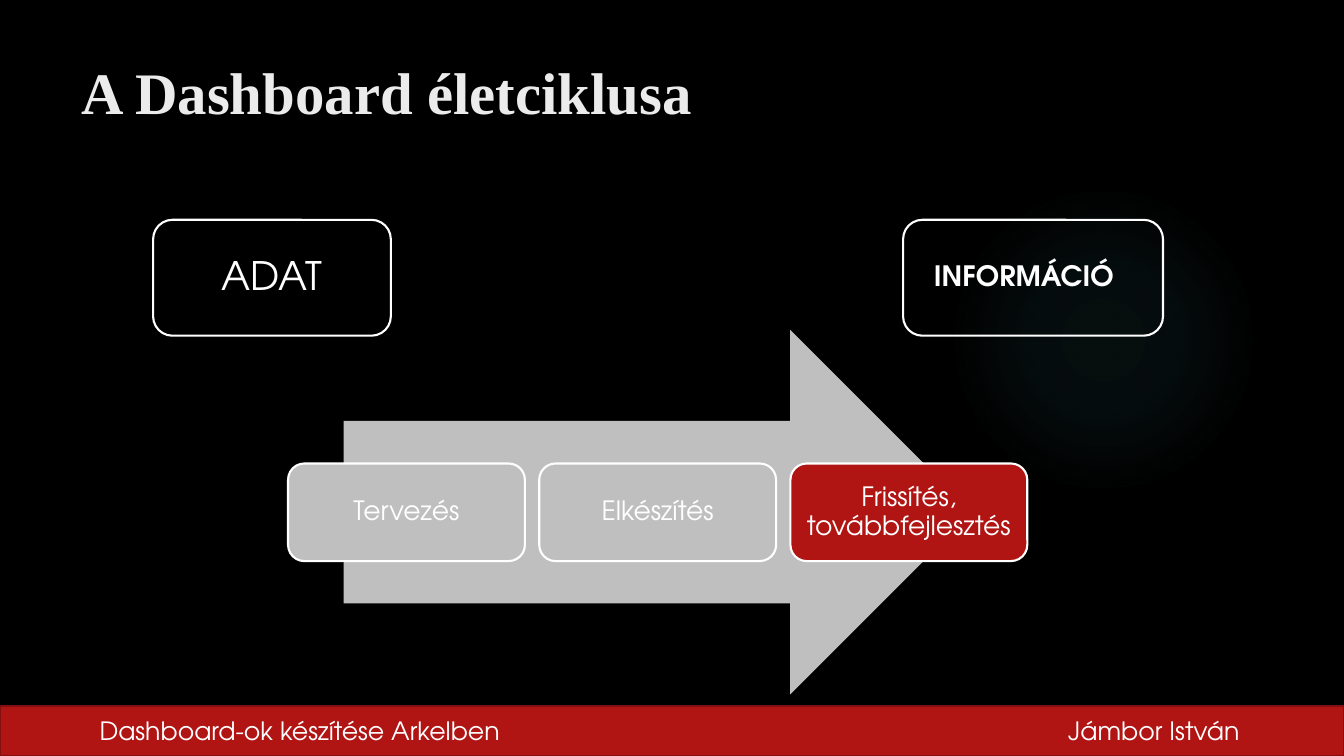
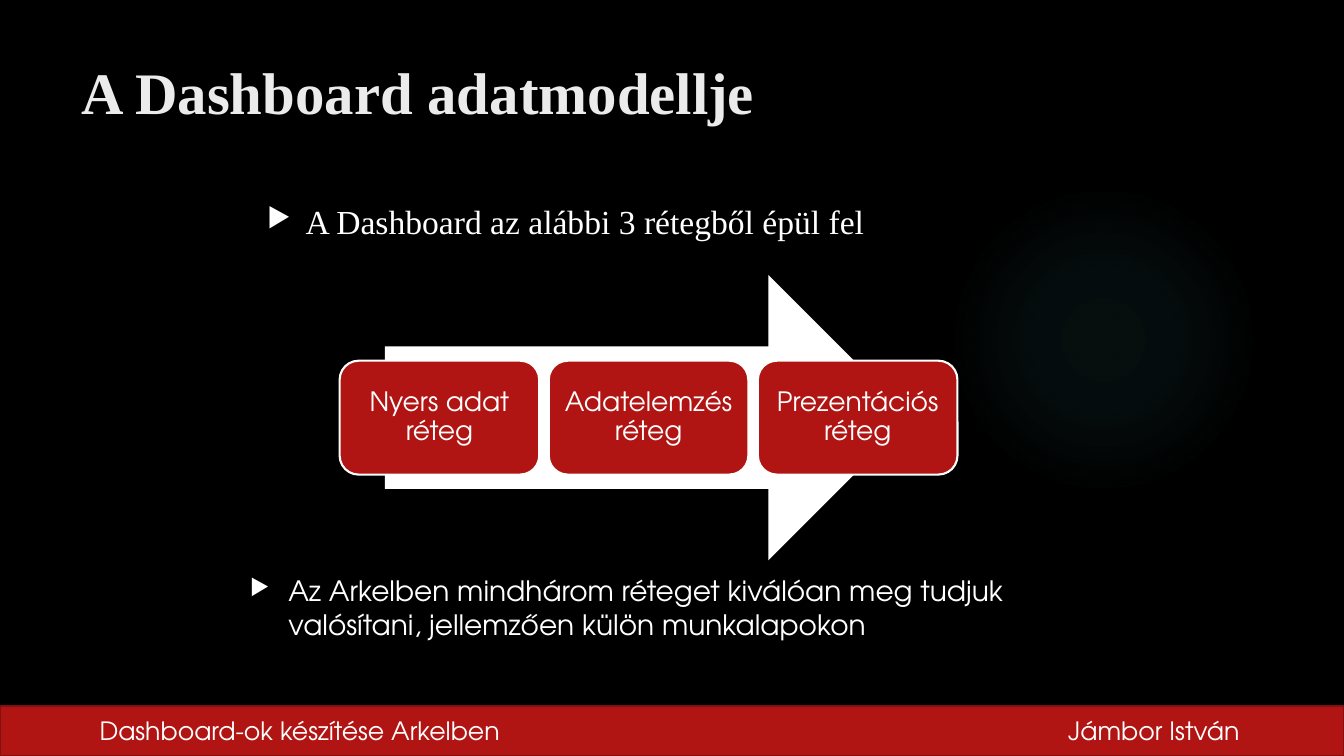
"""Build two slides on the life cycle and the data model of a dashboard."""
from lxml import etree
from pptx import Presentation
from pptx.dml.color import RGBColor
from pptx.enum.shapes import MSO_SHAPE
from pptx.enum.text import MSO_ANCHOR, PP_ALIGN
from pptx.oxml import parse_xml
from pptx.oxml.ns import nsdecls, qn
from pptx.util import Cm, Pt

RECTANGLE = MSO_SHAPE.RECTANGLE
ROUNDED = MSO_SHAPE.ROUNDED_RECTANGLE
ARROW = MSO_SHAPE.RIGHT_ARROW
OVAL = MSO_SHAPE.OVAL
LEFT = PP_ALIGN.LEFT
CENTER = PP_ALIGN.CENTER
MIDDLE = MSO_ANCHOR.MIDDLE

BLACK = RGBColor(0x00, 0x00, 0x00)
WHITE = RGBColor(0xFF, 0xFF, 0xFF)
TITLE_WHITE = RGBColor(0xEB, 0xEB, 0xEB)
GREY = RGBColor(0xBF, 0xBF, 0xBF)
RED = RGBColor(0xB0, 0x15, 0x13)
DARK_RED = RGBColor(0x82, 0x10, 0x0E)
GLOW = RGBColor(0x50, 0xB9, 0xC1)

SANS = "TeX Gyre Adventor"
SERIF = "Times New Roman"
FOOTER = "\tDashboard-ok készítése Arkelben\tJámbor István"
FOOTER_TABS = (2.26, 26.67)
GLOW_STOPS = ((0, 7), (36, 6), (69, 0))
BULLET_INDENT = Cm(0.97)


def add_panel(slide, preset, left, top, width, height, fill=None, line=None):
    """Add a preset shape with plain fill and outline; places are in cm."""
    shape = slide.shapes.add_shape(preset, Cm(left), Cm(top), Cm(width), Cm(height))
    shape.shadow.inherit = False
    if fill is None:
        shape.fill.background()
    else:
        shape.fill.solid()
        shape.fill.fore_color.rgb = fill
    if line is None:
        shape.line.fill.background()
    else:
        shape.line.color.rgb = line
        shape.line.width = Pt(1.5)
    return shape


def write_text(shape, text, size, font=SANS, color=WHITE, bold=False, align=LEFT):
    """Write one run into a shape and return its paragraph."""
    shape.text_frame.word_wrap = True
    paragraph = shape.text_frame.paragraphs[0]
    paragraph.alignment = align
    run = paragraph.add_run()
    run.text = text
    run.font.name = font
    run.font.size = Pt(size)
    run.font.bold = bold
    run.font.color.rgb = color
    return paragraph


presentation = Presentation()
presentation.slide_width = Cm(33.87)
presentation.slide_height = Cm(19.05)
blank_layout = presentation.slide_layouts[6]

slides = []
for title in ("A Dashboard életciklusa", "A Dashboard adatmodellje"):
    slide = presentation.slides.add_slide(blank_layout)
    slide.background.fill.solid()
    slide.background.fill.fore_color.rgb = BLACK

    glow = add_panel(slide, OVAL, 23.9, 4.65, 7.82, 7.82)
    stops = "".join(
        f'<a:gs pos="{position * 1000}"><a:srgbClr val="{GLOW}">'
        f'<a:alpha val="{alpha * 1000}"/></a:srgbClr></a:gs>'
        for position, alpha in GLOW_STOPS
    )
    gradient = parse_xml(
        f'<a:gradFill {nsdecls("a")}><a:gsLst>{stops}</a:gsLst><a:path path="circle">'
        '<a:fillToRect l="50000" t="50000" r="50000" b="50000"/></a:path></a:gradFill>'
    )
    properties = glow._element.spPr
    properties.replace(properties.find(qn("a:noFill")), gradient)

    footer = add_panel(slide, RECTANGLE, 0, 17.78, 33.87, 1.27, RED, DARK_RED)
    footer.text_frame.vertical_anchor = MIDDLE
    paragraph = write_text(footer, FOOTER, 18)
    tab_list = etree.SubElement(paragraph._p.get_or_add_pPr(), qn("a:tabLst"))
    for position in FOOTER_TABS:
        etree.SubElement(tab_list, qn("a:tab"), pos=str(Cm(position)), algn="l")

    title_box = slide.shapes.add_textbox(Cm(1.8), Cm(1.27), Cm(26.14), Cm(2.26))
    write_text(title_box, title, 42, SERIF, TITLE_WHITE, bold=True)
    slides.append(slide)

cycle_slide, model_slide = slides

add_panel(cycle_slide, ARROW, 8.66, 8.31, 15.85, 9.19, GREY)
add_panel(model_slide, ARROW, 9.7, 6.93, 13.26, 7.19, WHITE)

step_rows = (
    (cycle_slide, 7.26, 11.68, 5.97, 2.46, 6.33,
     (("Tervezés", GREY), ("Elkészítés", GREY), ("Frissítés, továbbfejlesztés", RED))),
    (model_slide, 8.56, 9.09, 5.03, 2.87, 5.27,
     (("Nyers adat réteg", RED), ("Adatelemzés réteg", RED), ("Prezentációs réteg", RED))),
)
cards = []
for slide, left, top, width, height, pitch, steps in step_rows:
    for index, (label, fill) in enumerate(steps):
        card = add_panel(slide, ROUNDED, left + index * pitch, top, width, height, fill, WHITE)
        cards.append((card, label, 19, False, 0.2, 0.2))

for label, left, width, size, bold, right_margin in (
    ("ADAT", 3.86, 5.99, 28, False, 0.33),
    ("INFORMÁCIÓ", 22.76, 6.55, 20, True, 0.79),
):
    card = add_panel(cycle_slide, ROUNDED, left, 5.54, width, 2.92, line=WHITE)
    cards.append((card, label, size, bold, 0.33, right_margin))

for card, label, size, bold, margin, right_margin in cards:
    frame = card.text_frame
    frame.vertical_anchor = MIDDLE
    frame.margin_left = frame.margin_top = frame.margin_bottom = Cm(margin)
    frame.margin_right = Cm(right_margin)
    write_text(card, label, size, bold=bold, align=CENTER).line_spacing = 0.9

for text, left, top, width, size, font in (
    ("A Dashboard az alábbi 3 rétegből épül fel", 6.48, 4.93, 18.64, 24, SERIF),
    ("Az Arkelben mindhárom réteget kiválóan meg tudjuk valósítani, "
     "jellemzően külön munkalapokon", 6.05, 14.33, 19.61, 20, SANS),
):
    bullet_box = model_slide.shapes.add_textbox(Cm(left), Cm(top), Cm(width), Cm(1.8))
    paragraph = write_text(bullet_box, text, size, font)
    properties = paragraph._p.get_or_add_pPr()
    properties.set("marL", str(BULLET_INDENT))
    properties.set("indent", str(-BULLET_INDENT))
    bullet_color = etree.SubElement(properties, qn("a:buClr"))
    etree.SubElement(bullet_color, qn("a:srgbClr"), val=str(WHITE))
    etree.SubElement(properties, qn("a:buSzPct"), val="80000")
    etree.SubElement(properties, qn("a:buChar"), char="▶")

presentation.save("out.pptx")
